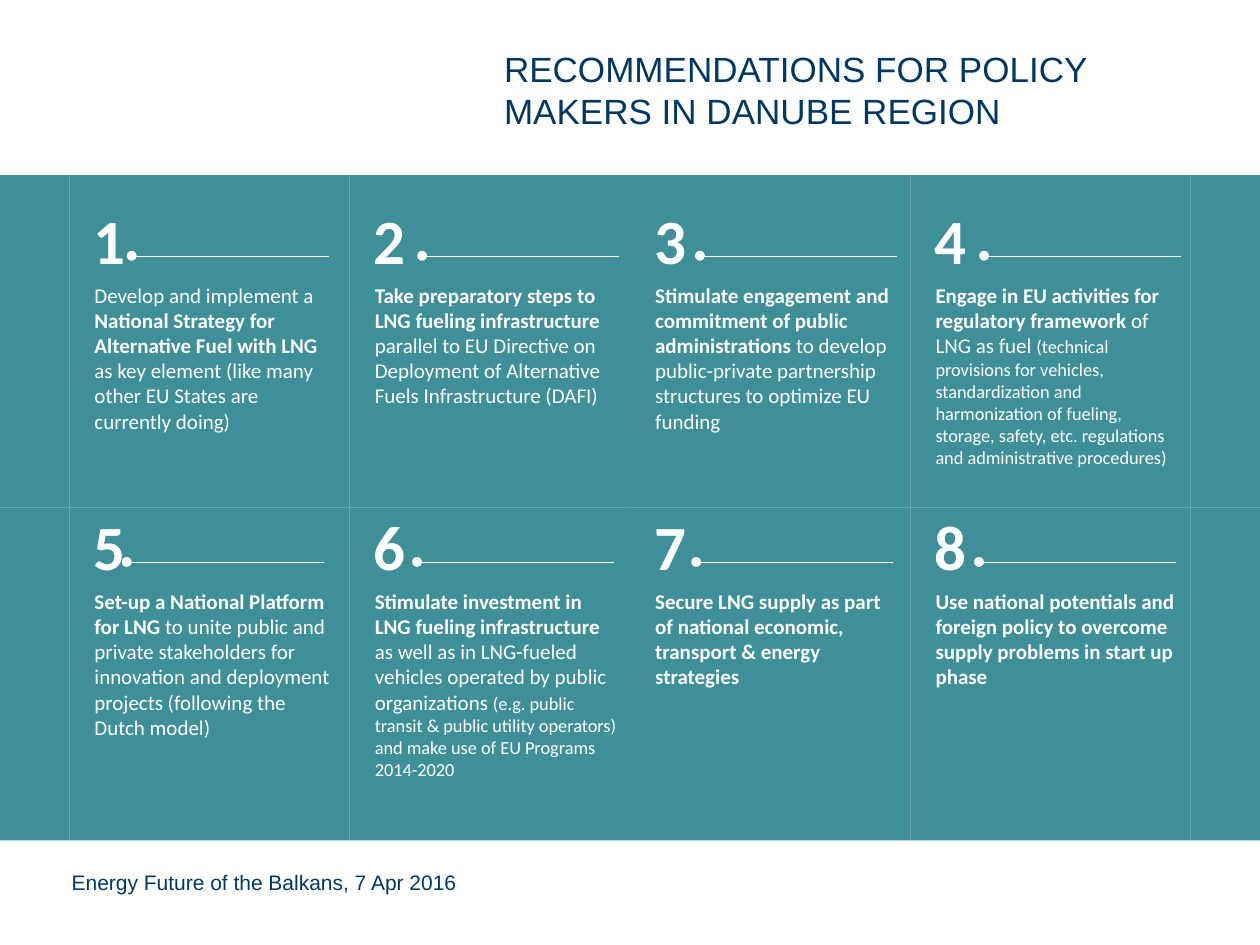
from pptx import Presentation
from pptx.dml.color import RGBColor
from pptx.enum.shapes import MSO_CONNECTOR, MSO_SHAPE
from pptx.enum.text import MSO_ANCHOR, PP_ALIGN
from pptx.oxml.ns import qn
from pptx.util import Inches, Pt
from lxml.etree import SubElement

COLORS = {"navy": "003863", "teal": "3F8F98", "white": "FFFFFF"}
PAGE_WIDTH, PAGE_HEIGHT = 10, 7.5
GRID_LEFT, GRID_TOP = 0.55, 1.39
COLUMN_WIDTH, ROW_HEIGHT = 2.225, 2.64
DOT_SIZE, RULE_LENGTH = 0.05, 1.54

ROWS = [
    {"rule": 0.64, "dots": [0.47, 0.55, 0.53, 0.56]},
    {"rule": 0.43, "dots": [0.43, 0.51, 0.5, 0.52]},
]

RECOMMENDATIONS = [
    [("Develop and implement a ", 12, False),
     ("National Strategy for Alternative Fuel with LNG ", 12, True),
     ("as key element (like many other EU States are currently doing)", 12, False)],
    [("Take preparatory steps to LNG fueling infrastructure ", 12, True),
     ("parallel to EU Directive on Deployment of Alternative Fuels Infrastructure (DAFI)", 12, False)],
    [("Stimulate engagement and commitment of public administrations ", 12, True),
     ("to develop public-private partnership structures to optimize EU funding", 12, False)],
    [("Engage in EU activities for regulatory framework", 12, True),
     (" of LNG as fuel ", 12, False),
     ("(technical provisions for vehicles, standardization and harmonization of fueling, "
      "storage, safety, etc. regulations and administrative procedures)", 10.5, False)],
    [("Set-up a National Platform for LNG ", 12, True),
     ("to unite public and private stakeholders for innovation and deployment projects "
      "(following the Dutch model)", 12, False)],
    [("Stimulate investment in LNG fueling infrastructure ", 12, True),
     ("as well as in LNG-fueled vehicles operated by public organizations ", 12, False),
     ("(e.g. public transit & public utility operators) and make use of EU Programs 2014-2020",
      10.5, False)],
    [("Secure LNG supply as part of national economic, transport & energy strategies", 12, True)],
    [("Use national potentials and foreign policy to overcome supply problems in start up phase",
      12, True)],
]


def color(name):
    """Return the named colour."""
    return RGBColor.from_string(COLORS[name])


def inches(*lengths):
    """Convert lengths in inches to slide units."""
    return [Inches(length) for length in lengths]


def style(font, name, size, tint, bold=False):
    """Set the typeface, size, colour and weight of a font."""
    font.name, font.size, font.bold = name, Pt(size), bold
    font.color.rgb = color(tint)


def add_filled(page, kind, box, tint):
    """Add a plain filled shape without outline or shadow."""
    shape = page.shapes.add_shape(kind, *inches(*box))
    shape.shadow.inherit = False
    shape.fill.solid()
    shape.fill.fore_color.rgb = color(tint)
    shape.line.fill.background()
    return shape


def add_title(page, box, text):
    """Fill and place the title placeholder."""
    title = page.shapes.title
    title.left, title.top, title.width, title.height = inches(*box)
    title.text_frame.text = text
    title.text_frame.word_wrap = True
    title.text_frame.vertical_anchor = MSO_ANCHOR.MIDDLE
    para = title.text_frame.paragraphs[0]
    para.alignment = PP_ALIGN.LEFT
    style(para.font, "Arial", 20, "navy")


def add_footer(page, box, text):
    """Add the event line below the grid."""
    frame = page.shapes.add_textbox(*inches(*box)).text_frame
    frame.word_wrap = True
    frame.vertical_anchor = MSO_ANCHOR.MIDDLE
    frame.text = text
    style(frame.paragraphs[0].font, "Arial", 12, "navy")


def add_panel(page, box, text_top, spans):
    """Add a teal panel holding one recommendation."""
    frame = add_filled(page, MSO_SHAPE.RECTANGLE, box, "teal").text_frame
    frame.word_wrap = True
    frame.vertical_anchor = MSO_ANCHOR.TOP
    frame.margin_left, frame.margin_right, frame.margin_top = inches(0.2, 0.08, text_top)
    para = frame.paragraphs[0]
    para.alignment = PP_ALIGN.LEFT
    for text, size, bold in spans:
        span = para.add_run()
        span.text = text
        style(span.font, "Calibri", size, "white", bold)


def add_number(page, box, number):
    """Add the large number of a recommendation."""
    frame = page.shapes.add_textbox(*inches(*box)).text_frame
    frame.word_wrap = False
    frame.text = str(number)
    para = frame.paragraphs[0]
    para.alignment = PP_ALIGN.CENTER
    style(para.font, "Calibri", 36, "white", True)


def add_dotted_rule(page, left, middle):
    """Add a thin rule that starts with a dot."""
    start = left + DOT_SIZE
    rule = page.shapes.add_connector(
        MSO_CONNECTOR.STRAIGHT, *inches(start + RULE_LENGTH, middle, start, middle))
    rule.line.color.rgb = color("white")
    rule.line.width = Pt(0.25)
    SubElement(rule._element.spPr, qn("a:effectLst"))
    dot_box = (left, middle - DOT_SIZE / 2, DOT_SIZE, DOT_SIZE)
    dot = add_filled(page, MSO_SHAPE.FLOWCHART_CONNECTOR, dot_box, "white")
    dot.line.color.rgb = color("white")
    dot.line.width = Pt(2)


def add_card(page, box, number, rule_top, dot_left, spans):
    """Add one numbered recommendation inside its grid cell."""
    left, top, _, _ = box
    add_panel(page, box, rule_top + 0.21, spans)
    add_number(page, (left + 0.09, top + rule_top - 0.48, 0.46, 0.71), number)
    add_dotted_rule(page, left + dot_left, top + rule_top)


def add_grid(page, left, top):
    """Add two rows of four cards with side panels out to the page edges."""
    right = left + 4 * COLUMN_WIDTH
    for row, layout in enumerate(ROWS):
        row_top = top + row * ROW_HEIGHT
        for side, width in ((0, left), (right, PAGE_WIDTH - right)):
            add_filled(page, MSO_SHAPE.RECTANGLE, (side, row_top, width, ROW_HEIGHT), "teal")
        for column, dot_left in enumerate(layout["dots"]):
            index = row * 4 + column
            box = (left + column * COLUMN_WIDTH, row_top, COLUMN_WIDTH, ROW_HEIGHT)
            add_card(page, box, index + 1, layout["rule"], dot_left, RECOMMENDATIONS[index])


def main():
    """Build and save the deck."""
    deck = Presentation()
    deck.slide_width, deck.slide_height = inches(PAGE_WIDTH, PAGE_HEIGHT)
    page = deck.slides.add_slide(deck.slide_layouts[5])
    add_title(page, (3.9, 0.29, 5.51, 0.84), "RECOMMENDATIONS FOR POLICY MAKERS IN DANUBE REGION")
    add_footer(page, (0.47, 6.69, 6.38, 0.63), "Energy Future of the Balkans, 7 Apr 2016")
    add_grid(page, GRID_LEFT, GRID_TOP)
    deck.save("out.pptx")


if __name__ == "__main__":
    main()
